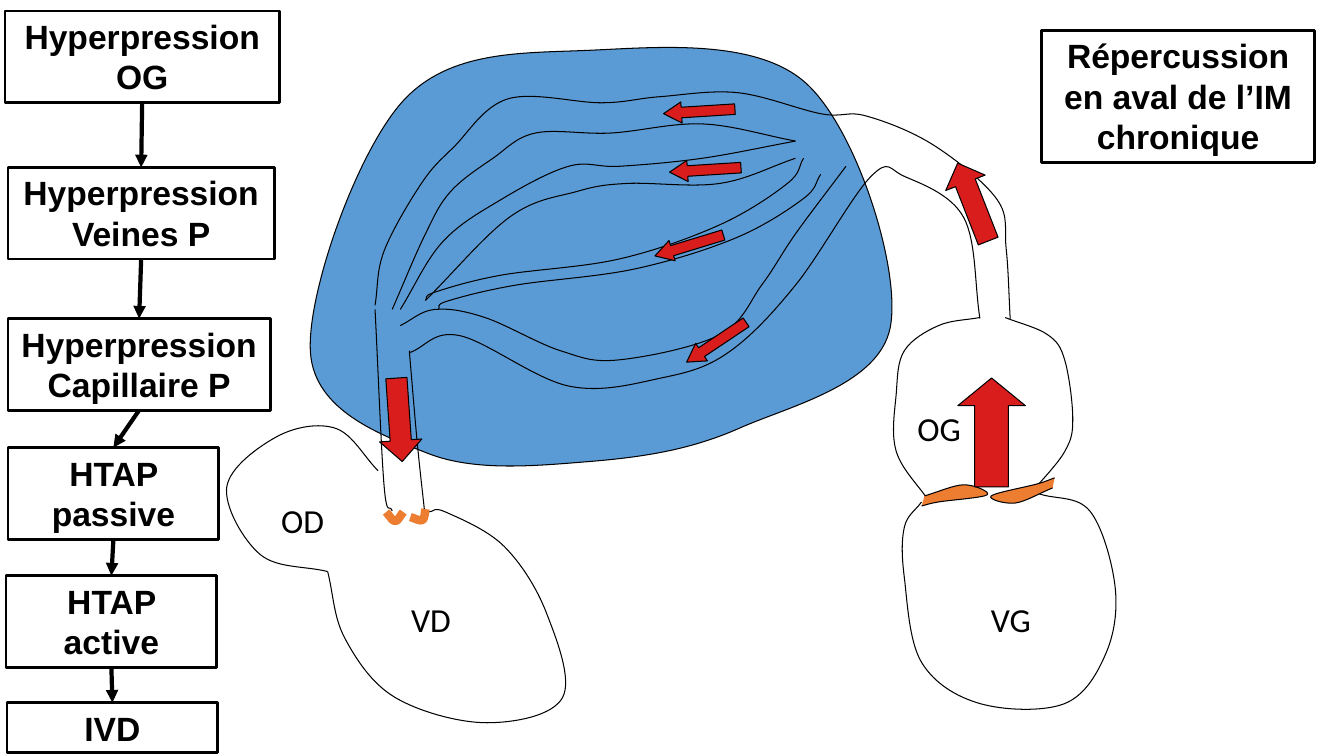
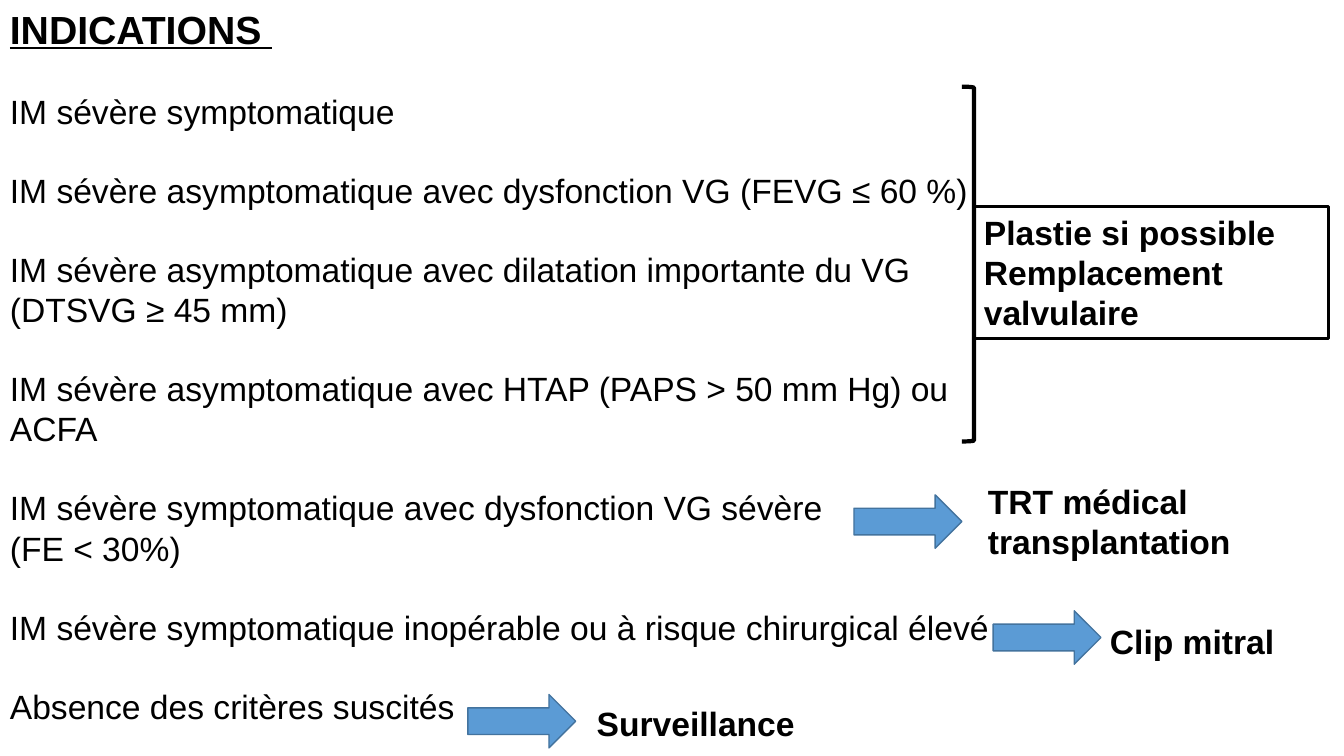
from lxml.etree import SubElement
from pptx import Presentation
from pptx.dml.color import RGBColor
from pptx.enum.shapes import MSO_CONNECTOR, MSO_SHAPE
from pptx.enum.text import MSO_ANCHOR, PP_ALIGN
from pptx.oxml.ns import qn
from pptx.util import Inches, Pt

BLACK, BLUE, BLUE_EDGE = "000000", "5B9BD5", "43739E"
RED, ORANGE = "D91C1C", "ED7D31"
HEAD, LABEL = "Arial", "Calibri"

LUNG = [(5.83, 0.5), (4, 1), (3.08, 3.5), (4.25, 4.5), (5.83, 4.58),
        (7.33, 4.25), (8.83, 3.25), (8, 0.83)]

HEART = [
    [(9.97, 3.15), (10.39, 3.32), (10.56, 3.57), (10.64, 4.15), (10.56, 4.48),
     (10.22, 4.9)],
    [(9.14, 4.98), (8.97, 5.23), (8.97, 5.73), (9.14, 6.57), (9.72, 6.98),
     (10.56, 6.98), (10.97, 6.48), (11.06, 5.82), (10.81, 5.07), (10.31, 4.9)],
    [(9.72, 3.15), (9.31, 3.23), (8.97, 3.48), (8.89, 3.9), (8.89, 4.48),
     (9.22, 4.98)],
    [(3.75, 4.67), (3.33, 4.25), (2.75, 4.33), (2.25, 4.83), (2.58, 5.5),
     (3.25, 5.67)],
    [(4.25, 5.08), (4.42, 5.08), (5, 5.42), (5.42, 6.08), (5.58, 6.92),
     (4.83, 7.17), (3.92, 6.92), (3.42, 6.33), (3.25, 5.67)],
]

VESSELS = [
    [(10.02, 3.17), (9.98, 2.47), (9.89, 1.98), (9.26, 1.44), (8.59, 1.15),
     (8.15, 1.13), (7.32, 0.92), (6.54, 0.96), (5.97, 1.02), (5.04, 0.98),
     (4.5, 1.46), (4.18, 1.82), (3.81, 2.49), (3.72, 3.03)],
    [(9.72, 3.16), (9.56, 2.16), (8.97, 1.75), (8.64, 1.75), (7.89, 2.83),
     (7.22, 3.5), (6.56, 3.75), (5.64, 3.83), (4.56, 3.33), (4.06, 3.5)],
    [(8.39, 1.65), (7.89, 2.32), (7.56, 2.82), (7.14, 3.32), (6.14, 3.57),
     (5.56, 3.48), (4.81, 3.15), (4.31, 3.07), (3.97, 3.23)],
    [(3.89, 3.07), (4.22, 2.32), (4.47, 1.9), (4.89, 1.57), (5.31, 1.32),
     (6.06, 1.32), (6.97, 1.23), (7.89, 1.4)],
    [(7.89, 1.4), (6.97, 1.57), (6.14, 1.65), (5.64, 1.65), (4.97, 1.98),
     (4.39, 2.4), (3.97, 3.07)],
    [(7.89, 1.57), (7.14, 1.82), (6.22, 1.82), (5.72, 1.9), (5.06, 2.15),
     (4.22, 2.98)],
    [(7.97, 1.57), (7.81, 1.82), (7.14, 2.23), (6.14, 2.57), (4.97, 2.73),
     (4.31, 2.9), (4.22, 2.98)],
    [(8.14, 1.73), (7.97, 1.97), (7.3, 2.36), (6.29, 2.67), (5.11, 2.83),
     (4.43, 2.99), (4.35, 3.07)],
    [(3.72, 3.07), (3.81, 4.82), (3.89, 5.07)],
    [(4.06, 3.48), (4.14, 4.4), (4.22, 5.15)],
]

MITRAL = [
    [(9.17, 4.92), (9.56, 4.81), (9.79, 4.91), (9.31, 4.98), (9.14, 5.02)],
    [(10.44, 4.84), (10.07, 4.99), (9.83, 4.92), (10.29, 4.8), (10.46, 4.74)],
]
PULMONARY = [
    [(3.83, 5.08), (3.92, 5.17), (4, 5.08)],
    [(4.07, 5.13), (4.19, 5.16), (4.22, 5.05)],
]

FLOWS = [
    (9.5, 3.75, 0.67, 1.08, 0, 0.41), (9.44, 1.59, 0.42, 0.83, 338.6, 0.5),
    (6.73, 2.08, 0.21, 0.71, 253, 0.85), (6.89, 1.33, 0.21, 0.71, 266.4, 0.85),
    (6.83, 0.75, 0.21, 0.71, 266.4, 0.85), (7, 3.04, 0.21, 0.71, 236.2, 0.85),
    (3.75, 3.75, 0.42, 0.83, 176, 0.5),
]

CHAMBERS = [("VG", 9.73, 5.89), ("OG", 9, 4), ("VD", 3.98, 5.89), ("OD", 2.69, 4.91)]

CASCADE = [
    ("Hyperpression OG", 0.05, 0.11, 2.72, 0.91),
    ("Hyperpression Veines P", 0.08, 1.66, 2.64, 0.91),
    ("Hyperpression Capillaire P", 0.08, 3.16, 2.6, 0.91),
    ("HTAP passive", 0.08, 4.44, 2.09, 0.91),
    ("HTAP active", 0.06, 5.71, 2.09, 0.91),
    ("IVD", 0.07, 6.97, 2.09, 0.5),
]

INDICATIONS = [
    ["IM sévère symptomatique"],
    ["IM sévère asymptomatique avec dysfonction VG (FEVG ≤ 60 %)"],
    ["IM sévère asymptomatique avec dilatation importante du VG", "(DTSVG ≥ 45 mm)"],
    ["IM sévère asymptomatique avec HTAP (PAPS > 50 mm Hg) ou", "ACFA"],
    ["IM sévère symptomatique avec dysfonction VG sévère", "(FE < 30%)"],
    ["IM sévère symptomatique inopérable ou à risque chirurgical élevé"],
    ["Absence des critères suscités"],
]


def rgb(value):
    """Turn a hex string into a colour."""
    return RGBColor.from_string(value)


def write(p, text, size=24, font=HEAD, bold=False, underline=False,
          color=BLACK, align=PP_ALIGN.LEFT, before=0):
    """Write formatted text into a paragraph."""
    p.alignment = align
    p.space_before = Pt(before)
    r = p.add_run()
    r.text = text
    r.font.size, r.font.name = Pt(size), font
    r.font.bold, r.font.underline = bold, underline
    r.font.color.rgb = rgb(color)


def write_lines(tf, text, **fmt):
    """Write each line of the text as a paragraph of the frame."""
    for i, line in enumerate(text.split("\n")):
        write(tf.add_paragraph() if i else tf.paragraphs[0], line, **fmt)


def paint(sp, fill=None, line=BLACK, width=0.75):
    """Set fill and outline and remove the shadow."""
    sp.shadow.inherit = False
    if fill:
        sp.fill.solid()
        sp.fill.fore_color.rgb = rgb(fill)
    else:
        sp.fill.background()
    sp.line.color.rgb = rgb(line)
    sp.line.width = Pt(width)


def add_preset(s, kind, x, y, w, h, **style):
    """Add a painted preset shape."""
    sp = s.shapes.add_shape(kind, Inches(x), Inches(y), Inches(w), Inches(h))
    paint(sp, **style)
    return sp


def add_label(s, text, x, y, w, h=0.5, wrap=False, **fmt):
    """Add a text box."""
    tf = s.shapes.add_textbox(Inches(x), Inches(y), Inches(w), Inches(h)).text_frame
    tf.word_wrap = wrap
    write_lines(tf, text, **fmt)
    return tf


def add_frame(s, text, x, y, w, h, align=PP_ALIGN.CENTER):
    """Add an outlined box with bold text."""
    sp = add_preset(s, MSO_SHAPE.RECTANGLE, x, y, w, h, width=2)
    sp.text_frame.word_wrap = True
    sp.text_frame.vertical_anchor = MSO_ANCHOR.TOP
    write_lines(sp.text_frame, text, bold=True, align=align)
    return sp


def bezier_points(knots, closed):
    """Return the start, then two handles and an end for each segment."""
    n = len(knots)

    def handle(i):
        if closed:
            a, b, part = knots[i - 1], knots[(i + 1) % n], 6
        else:
            a, b = knots[max(i - 1, 0)], knots[min(i + 1, n - 1)]
            part = 6 if 0 < i < n - 1 else 3
        return (b[0] - a[0]) / part, (b[1] - a[1]) / part

    points = [knots[0]]
    for i in range(n if closed else n - 1):
        j = (i + 1) % n
        (px, py), (dx, dy) = knots[i], handle(i)
        (qx, qy), (ex, ey) = knots[j], handle(j)
        points += [(px + dx, py + dy), (qx - ex, qy - ey), (qx, qy)]
    return points


def add_curve(s, knots, closed=False, **style):
    """Add a smooth outline through the knots."""
    points = [(Inches(x), Inches(y)) for x, y in bezier_points(knots, closed)]
    fb = s.shapes.build_freeform(*points[0])
    fb.add_line_segments(points[1:], close=closed)
    sp = fb.convert_to_shape()
    paint(sp, **style)
    lines = list(sp._element.iter(qn("a:lnTo")))
    outline = lines[0].getparent()
    for i in range(0, len(lines), 3):
        curve = SubElement(outline, qn("a:cubicBezTo"))
        lines[i].addprevious(curve)
        for line in lines[i:i + 3]:
            curve.append(line[0])
            outline.remove(line)


def add_link(s, upper, lower):
    """Join two boxes with a downward arrow."""
    c = s.shapes.add_connector(MSO_CONNECTOR.STRAIGHT, 0, 0, 0, 0)
    c.begin_connect(upper, 2)
    c.end_connect(lower, 0)
    c.line.color.rgb = rgb(BLACK)
    c.line.width = Pt(3)
    SubElement(c.line._get_or_add_ln(), qn("a:tailEnd"), type="triangle")
    SubElement(c._element.spPr, qn("a:effectLst"))


def add_flow(s, x, y, w, h, angle, head):
    """Add a red blood flow arrow."""
    sp = add_preset(s, MSO_SHAPE.UP_ARROW, x, y, w, h, fill=RED)
    sp.adjustments[1] = head
    sp.rotation = angle


def build_repercussion(s):
    """Build the slide on the effects of chronic regurgitation."""
    add_curve(s, LUNG, closed=True, fill=BLUE)
    for knots in HEART + VESSELS:
        add_curve(s, knots)
    for knots in MITRAL:
        add_curve(s, knots, fill=ORANGE)
    for knots in PULMONARY:
        add_curve(s, knots, line=ORANGE, width=6)
    for flow in FLOWS:
        add_flow(s, *flow)
    for name, x, y in CHAMBERS:
        add_label(s, name, x, y, 0.64, font=LABEL)
    add_frame(s, "Répercussion en aval de l’IM\nchronique", 10.33, 0.3, 2.71, 1.31)
    boxes = [add_frame(s, *step) for step in CASCADE]
    for upper, lower in zip(boxes, boxes[1:]):
        add_link(s, upper, lower)


def build_indications(s):
    """Build the slide on the indications for treatment."""
    tf = add_label(s, "INDICATIONS ", 0, 0, 13.33, 7.5, wrap=True,
                   size=28, bold=True, underline=True)
    for lines in INDICATIONS:
        for i, line in enumerate(lines):
            write(tf.add_paragraph(), line, before=0 if i else 27.6)
    add_frame(s, "Plastie si possible\nRemplacement valvulaire",
              9.66, 2.05, 3.52, 1.31, align=PP_ALIGN.LEFT)
    add_preset(s, MSO_SHAPE.RIGHT_BRACKET, 9.54, 0.86, 0.12, 3.52, width=3)
    for x, y in [(8.47, 4.91), (9.85, 6.06), (4.64, 6.89)]:
        add_preset(s, MSO_SHAPE.RIGHT_ARROW, x, y, 1.07, 0.53,
                   fill=BLUE, line=BLUE_EDGE, width=1)
    add_label(s, "TRT médical\ntransplantation", 9.7, 4.72, 2.63, 0.91, bold=True)
    add_label(s, "Clip mitral", 10.91, 6.11, 1.85, bold=True)
    add_label(s, "Surveillance", 5.82, 6.92, 2.18, bold=True)


def main():
    """Build and save the presentation."""
    prs = Presentation()
    prs.slide_width, prs.slide_height = Inches(13.33), Inches(7.5)
    for build in (build_repercussion, build_indications):
        build(prs.slides.add_slide(prs.slide_layouts[6]))
    prs.save("out.pptx")


if __name__ == "__main__":
    main()
